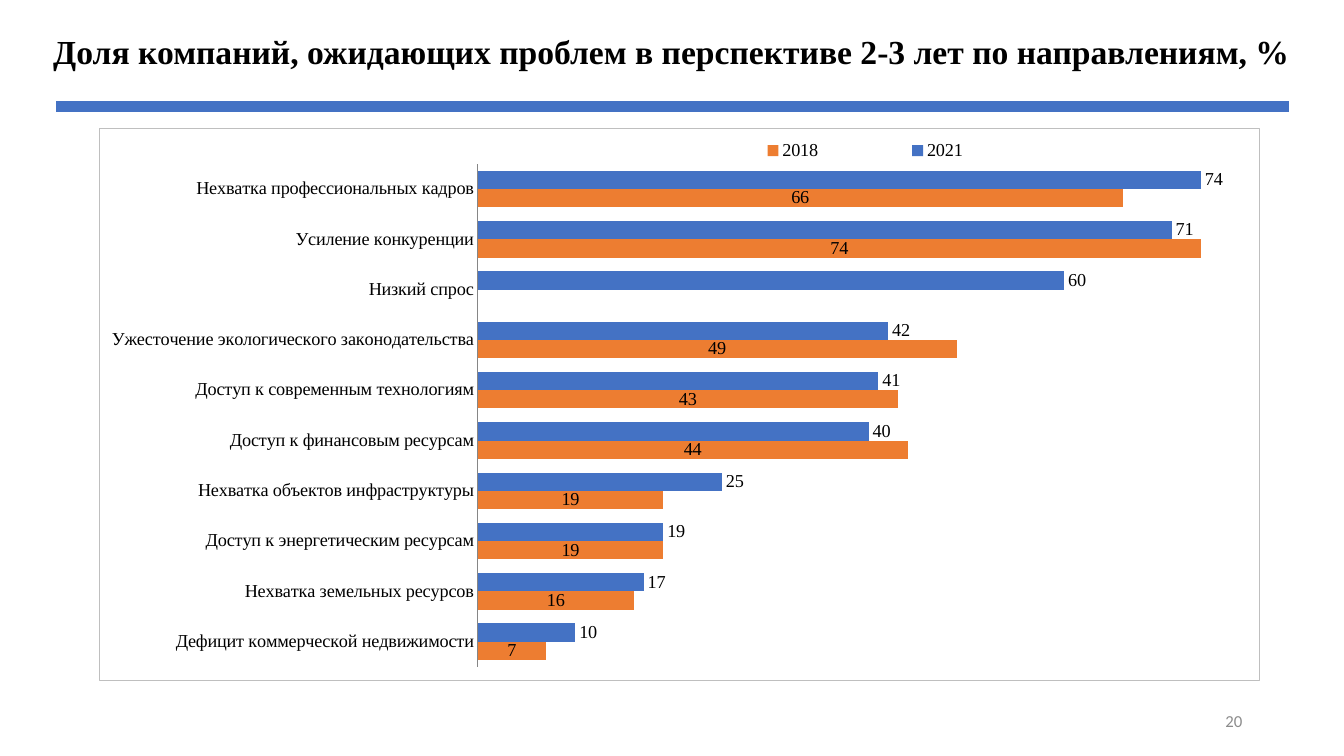
from lxml import etree
from pptx import Presentation
from pptx.chart.data import CategoryChartData
from pptx.dml.color import RGBColor
from pptx.enum.chart import XL_CHART_TYPE, XL_LABEL_POSITION, XL_LEGEND_POSITION, XL_TICK_MARK
from pptx.enum.shapes import MSO_CONNECTOR
from pptx.enum.text import MSO_ANCHOR, PP_ALIGN
from pptx.oxml import parse_xml
from pptx.oxml.ns import nsdecls, qn
from pptx.util import Inches, Pt

BAR = XL_CHART_TYPE.BAR_CLUSTERED
TOP = XL_LEGEND_POSITION.TOP
NONE = XL_TICK_MARK.NONE
CENTER, OUTER = XL_LABEL_POSITION.CENTER, XL_LABEL_POSITION.OUTSIDE_END
SERIF = "Times New Roman"
BLUE, ORANGE = "4472C4", "ED7D31"


def paint(target, code):
    """Set a solid colour on a fill, or on a font or line colour."""
    if hasattr(target, "solid"):
        target.solid()
        target = target.fore_color
    target.rgb = RGBColor.from_string(code)


def place(part, index, shares, inner=False):
    """Give a chart part a fixed place, in shares of the chart."""
    for old in part.findall(qn("c:layout")):
        part.remove(old)
    marks = '<c:layoutTarget val="inner"/>' if inner else ""
    marks += '<c:xMode val="edge"/><c:yMode val="edge"/>'
    for key, share in zip("xywh", shares):
        marks += f'<c:{key} val="{share}"/>'
    part.insert(index, parse_xml(
        f'<c:layout {nsdecls("c")}><c:manualLayout>{marks}</c:manualLayout></c:layout>'))


deck = Presentation()
deck.slide_width, deck.slide_height = Inches(13.33), Inches(7.5)
slide = deck.slides.add_slide(deck.slide_layouts[6])
shapes = slide.shapes

# Title and page number
texts = [
    ("Доля компаний, ожидающих проблем в перспективе 2-3 лет по направлениям, %",
     (0.43, 0.26, 12.47, 0.5), SERIF, 24, "000000", True, PP_ALIGN.LEFT, MSO_ANCHOR.TOP),
    ("20", (9.42, 6.95, 3, 0.4), "Calibri", 12, "8C8C8C", False,
     PP_ALIGN.RIGHT, MSO_ANCHOR.MIDDLE),
]
for words, spot, face, size, code, bold, align, anchor in texts:
    frame = shapes.add_textbox(*map(Inches, spot)).text_frame
    frame.word_wrap = True
    frame.vertical_anchor = anchor
    para = frame.paragraphs[0]
    para.alignment = align
    run = para.add_run()
    run.text = words
    run.font.name, run.font.size, run.font.bold = face, Pt(size), bold
    paint(run.font.color, code)

# Rule under the title
rule = shapes.add_connector(MSO_CONNECTOR.STRAIGHT, *map(Inches, (0.56, 1.06, 12.78, 1.06)))
paint(rule.line.fill, BLUE)
rule.line.width = Pt(8)
etree.SubElement(rule.line._get_or_add_ln().getparent(), qn("a:effectLst"))

# Chart data: problem, 2021, 2018
rows = [
    ("Нехватка профессиональных кадров", 74, 66),
    ("Усиление конкуренции", 71, 74),
    ("Низкий спрос", 60, None),
    ("Ужесточение экологического законодательства", 42, 49),
    ("Доступ к современным технологиям", 41, 43),
    ("Доступ к финансовым ресурсам", 40, 44),
    ("Нехватка объектов инфраструктуры", 25, 19),
    ("Доступ к энергетическим ресурсам", 19, 19),
    ("Нехватка земельных ресурсов", 17, 16),
    ("Дефицит коммерческой недвижимости", 10, 7),
]
names, now, past = zip(*rows)
data = CategoryChartData()
data.categories = names
data.add_series("2021", now)
data.add_series("2018", past)
chart = shapes.add_chart(BAR, *map(Inches, (0.98, 1.27, 11.52, 5.49)), data).chart
chart.has_title = False
chart.font.name, chart.font.size = SERIF, Pt(13)
paint(chart.font.color, "000000")

# Bars and labels
plot = chart.plots[0]
plot.gap_width, plot.overlap, plot.vary_by_categories = 75, 0, False
for bars, code, spot in zip(plot.series, (BLUE, ORANGE), (OUTER, CENTER)):
    paint(bars.format.fill, code)
    labels = bars.data_labels
    labels.show_value = True
    labels.number_format, labels.number_format_is_linked = "#,##0", False
    labels.position = spot

# Axes
side = chart.category_axis
side.reverse_order = True
side.major_tick_mark = side.minor_tick_mark = NONE
paint(side.format.line.fill, "868686")
scale = chart.value_axis
scale.minimum_scale, scale.maximum_scale = 0, 80
scale.has_major_gridlines = False
scale.visible = False

# Legend, plot place and border
chart.has_legend = True
chart.legend.position = TOP
chart.legend.include_in_layout = False
root = chart.element.find(qn("c:chart"))
place(root.find(qn("c:legend")), 1, (0.5, 0.01, 0.32, 0.06))
place(root.find(qn("c:plotArea")), 0, (0.326, 0.064, 0.674, 0.911), inner=True)
root.addnext(parse_xml(
    f'<c:spPr {nsdecls("c", "a")}><a:noFill/><a:ln w="{Pt(0.75)}"><a:solidFill>'
    '<a:srgbClr val="BFBFBF"/></a:solidFill></a:ln></c:spPr>'))

deck.save("out.pptx")
